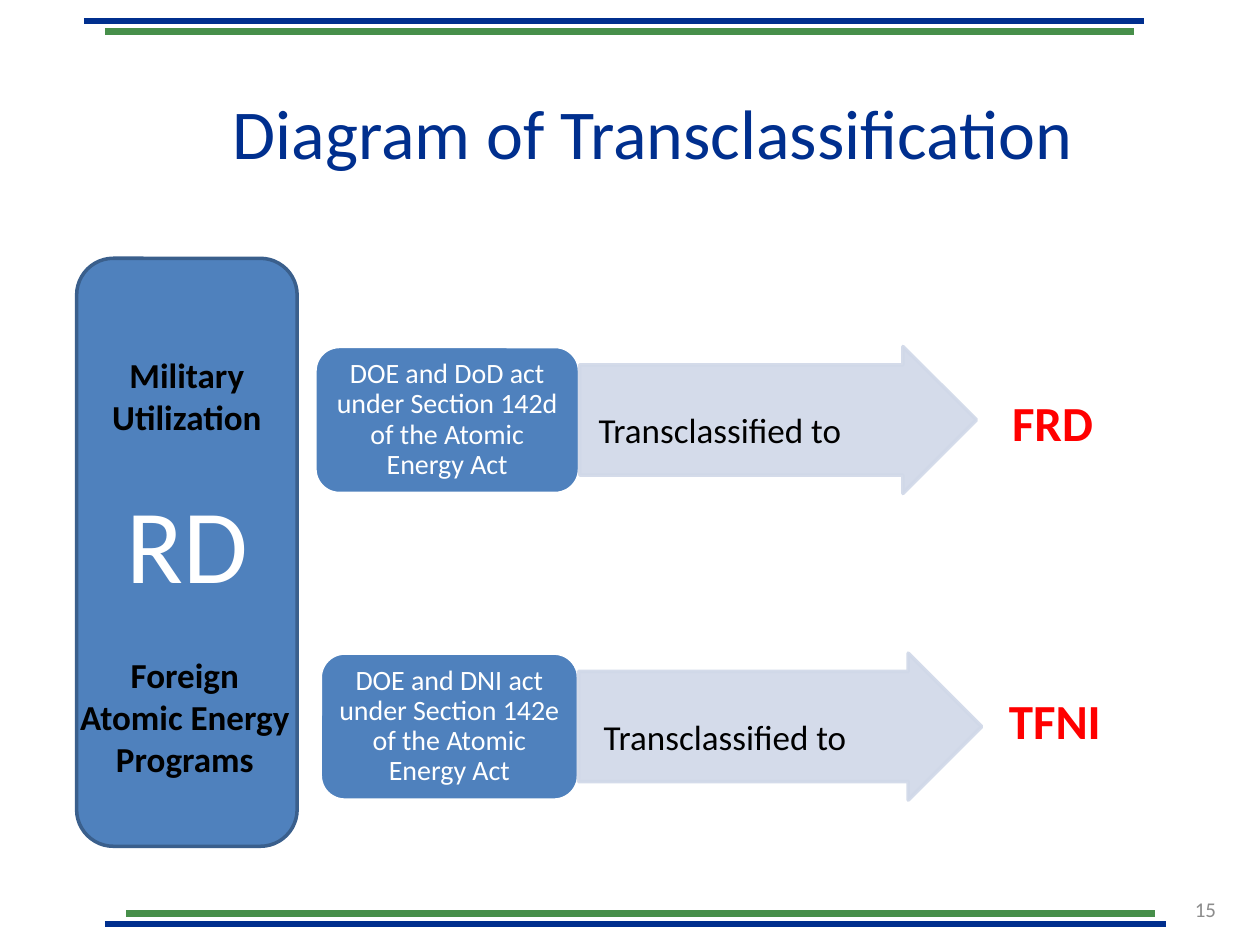
from dataclasses import dataclass
from typing import NamedTuple

from lxml.etree import SubElement
from pptx import Presentation
from pptx.dml.color import RGBColor
from pptx.enum.shapes import MSO_CONNECTOR as CONN, MSO_SHAPE as SHAPE
from pptx.enum.text import MSO_ANCHOR as ANCHOR, PP_ALIGN as ALIGN
from pptx.oxml.ns import qn
from pptx.util import Inches, Pt

# Grid of 120 columns by 90 rows, twelve to the inch
COLS, ROWS, PER_INCH = 120, 90, 12
NAVY, GREEN, BLUE, EDGE = "002F8E", "478F4A", "4F81BD", "3A5F8C"
PALE, WHITE, BLACK, RED, GREY = "D0D8E8", "FFFFFF", "000000", "FF0000", "8C8C8C"
TEXT_INSETS = (0.1, 0.05, 0.1, 0.05)
STEP_INSETS = (0.08, 0.04, 0.08, 0.04)


class Box(NamedTuple):
    col: float
    row: float
    cols: float
    rows: float


class Rule(NamedTuple):
    start: float
    end: float
    row: float
    color: str


@dataclass
class Style:
    size: float
    color: str
    bold: bool = False
    align: ALIGN = ALIGN.CENTER
    anchor: ANCHOR = ANCHOR.MIDDLE
    spacing: float = 1.0
    insets: tuple = TEXT_INSETS
    wrap: bool = True


@dataclass
class Route:
    """One way of transclassification: step, arrow, result."""
    step: Box
    arrow_cols: float
    agency: str
    section: str
    indent: float
    result: str
    result_box: Box


def grid(n: float) -> int:
    return Inches(n / PER_INCH)


def rgb(color: str) -> RGBColor:
    return RGBColor.from_string(color)


def write(sp, lines: list[str], style: Style) -> None:
    tf = sp.text_frame
    tf.word_wrap = style.wrap
    tf.vertical_anchor = style.anchor
    (tf.margin_left, tf.margin_top,
     tf.margin_right, tf.margin_bottom) = map(Inches, style.insets)
    for i, line in enumerate(lines):
        p = tf.add_paragraph() if i else tf.paragraphs[0]
        p.alignment, p.line_spacing = style.align, style.spacing
        r = p.add_run()
        r.text = line
        r.font.name, r.font.size, r.font.bold = "Calibri", Pt(style.size), style.bold
        r.font.color.rgb = rgb(style.color)


def add_text(s, box: Box, lines: list[str], style: Style) -> None:
    write(s.shapes.add_textbox(*map(grid, box)), lines, style)


def add_block(s, kind: SHAPE, box: Box, fill: str, line: str | None = None):
    sp = s.shapes.add_shape(kind, *map(grid, box))
    sp.shadow.inherit = False
    sp.fill.solid()
    sp.fill.fore_color.rgb = rgb(fill)
    if line:
        sp.line.color.rgb = rgb(line)
        sp.line.width = Pt(2)
    else:
        sp.line.fill.background()
    return sp


def add_rule(s, rule: Rule) -> None:
    y = grid(rule.row)
    c = s.shapes.add_connector(CONN.STRAIGHT, grid(rule.start), y, grid(rule.end), y)
    c.line.color.rgb = rgb(rule.color)
    c.line.width = Pt(3.5)
    SubElement(c._element.spPr, qn("a:effectLst"))


def add_route(s, route: Route) -> None:
    step = route.step
    sp = add_block(s, SHAPE.ROUNDED_RECTANGLE, step, BLUE, WHITE)
    write(sp, [f"DOE and {route.agency} act under Section {route.section} "
               "of the Atomic Energy Act"],
          Style(16, WHITE, spacing=0.9, insets=STEP_INSETS))

    # The arrow starts where the step ends
    box = Box(step.col + step.cols, step.row, route.arrow_cols, step.rows)
    arrow = add_block(s, SHAPE.RIGHT_ARROW, box, PALE, PALE)
    arrow.adjustments[0], arrow.adjustments[1] = 0.75, 0.5
    for clr in arrow._element.spPr.iter(qn("a:srgbClr")):
        SubElement(clr, qn("a:alpha"), val="90000")
    write(arrow, ["Transclassified to"],
          Style(20, BLACK, align=ALIGN.LEFT, spacing=0.9,
                insets=(route.indent, 0.2, 0, 0)))

    add_text(s, route.result_box, [route.result],
             Style(28, RED, bold=True, align=ALIGN.LEFT, anchor=ANCHOR.TOP))


RULES = [
    Rule(8, 109, 2, NAVY), Rule(10, 108, 3, GREEN),
    Rule(10, 111, 88, NAVY), Rule(12, 110, 87, GREEN),
]
ROUTES = [
    Route(Box(30, 33, 25.2, 14), 37.8, "DoD", "142d", 0.15,
          "FRD", Box(95.2, 36.8, 11.6, 6.8)),
    Route(Box(30.5, 62.2, 24.6, 14), 38.4, "DNI", "142e", 0.2,
          "TFNI", Box(94.9, 65.2, 11.9, 6.8)),
]


def main() -> None:
    prs = Presentation()
    prs.slide_width, prs.slide_height = grid(COLS), grid(ROWS)
    s = prs.slides.add_slide(prs.slide_layouts[6])

    # Frame, page number and title
    for rule in RULES:
        add_rule(s, rule)
    add_text(s, Box(89, 84.2, 28, 4.8), ["15"], Style(12, GREY, align=ALIGN.RIGHT))
    add_text(s, Box(21, 5, 92, 15), ["Diagram of Transclassification"],
             Style(40, NAVY, align=ALIGN.LEFT))

    # Pillar of restricted data
    add_block(s, SHAPE.ROUNDED_RECTANGLE, Box(7.3, 24.6, 21, 56), BLUE, EDGE)
    rd = add_block(s, SHAPE.RECTANGLE, Box(10.3, 45.6, 15, 12), BLUE)
    write(rd, ["RD"], Style(60, WHITE))
    source = Style(20, BLACK, bold=True, anchor=ANCHOR.TOP, wrap=False)
    add_text(s, Box(9.4, 33.1, 16.8, 9.2), ["Military", "Utilization"], source)
    add_text(s, Box(5.3, 61.6, 24.6, 13.3),
             ["Foreign", "Atomic Energy", "Programs"], source)

    for route in ROUTES:
        add_route(s, route)
    prs.save("out.pptx")


if __name__ == "__main__":
    main()
